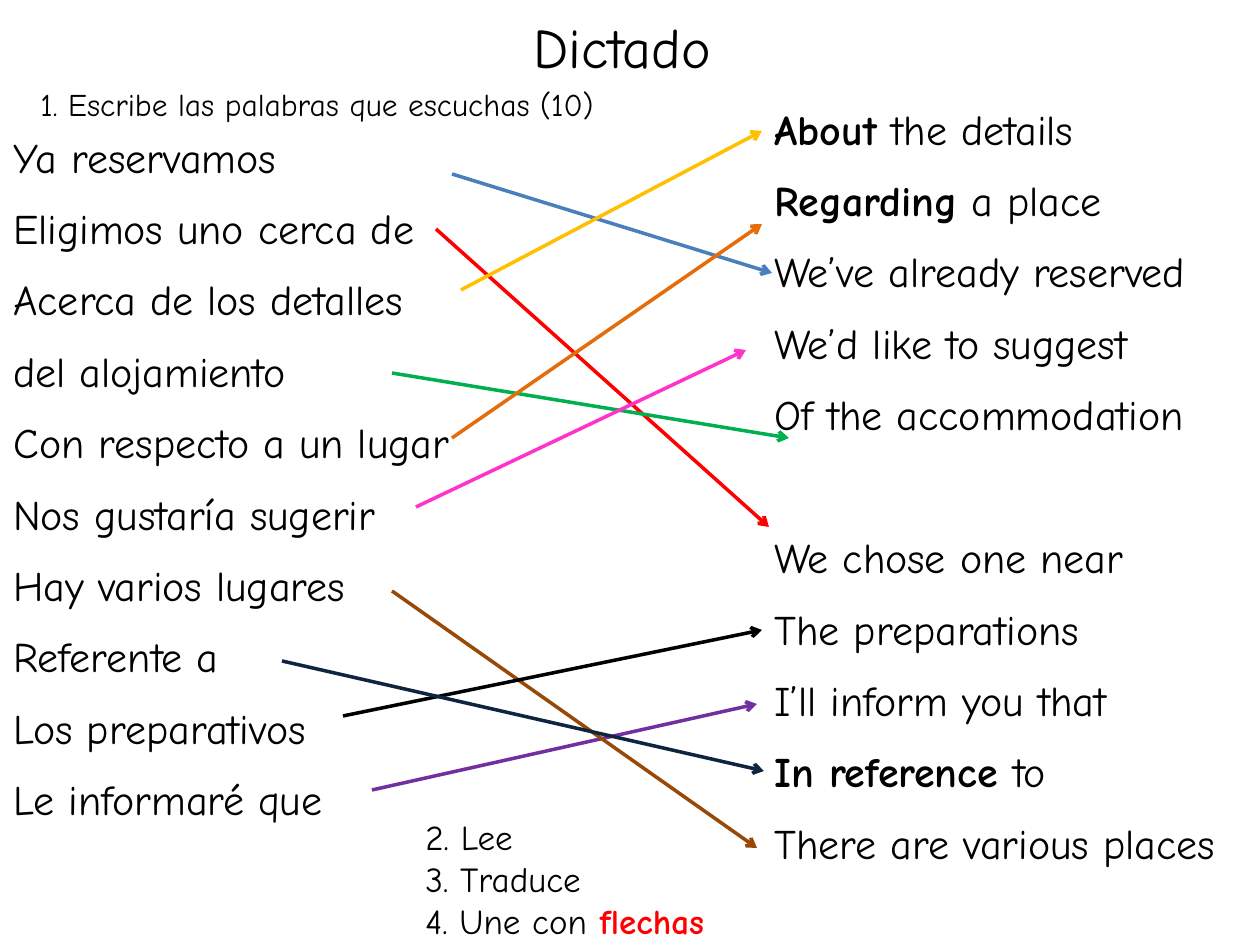
from typing import NamedTuple

from lxml.etree import SubElement
from pptx import Presentation
from pptx.dml.color import RGBColor
from pptx.enum.shapes import MSO_CONNECTOR as Connector
from pptx.enum.text import MSO_AUTO_SIZE as AutoSize
from pptx.oxml.ns import qn
from pptx.util import Pt

PX = 914400 // 126  # EMU in one px
FONT = "Comic Neue"

BLACK = RGBColor(0x00, 0x00, 0x00)
RED = RGBColor(0xFF, 0x00, 0x00)
BLUE = RGBColor(0x4B, 0x7E, 0xBC)
GOLD = RGBColor(0xFF, 0xC0, 0x00)
GREEN = RGBColor(0x00, 0xB0, 0x50)
PURPLE = RGBColor(0x70, 0x30, 0xA0)
PINK = RGBColor(0xFF, 0x33, 0xCC)
ORANGE = RGBColor(0xE4, 0x6C, 0x0A)
BROWN = RGBColor(0x98, 0x48, 0x07)
NAVY = RGBColor(0x0F, 0x24, 0x3E)


class Words(NamedTuple):
    text: str
    bold: bool = False
    color: RGBColor = BLACK
    size: int | None = None  # None takes the size of the block


class Line(NamedTuple):
    words: list[Words]
    space_before: int = 0


class Block(NamedTuple):
    left: int
    top: int
    width: int
    height: int
    size: int
    lines: list[Line]
    space_after: int = 0
    wrap: bool = False


class Match(NamedTuple):
    start: tuple[int, int]
    end: tuple[int, int]
    color: RGBColor


def plain(*texts: str) -> list[Line]:
    return [Line([Words(text)]) for text in texts]


def draw_block(slide, block: Block) -> None:
    box = slide.shapes.add_textbox(
        *(PX * n for n in (block.left, block.top, block.width, block.height)))
    frame = box.text_frame
    frame_format = {"word_wrap": block.wrap,
                    "auto_size": AutoSize.SHAPE_TO_FIT_TEXT}
    for key, value in frame_format.items():
        setattr(frame, key, value)

    for index, line in enumerate(block.lines):
        paragraph = frame.add_paragraph() if index else frame.paragraphs[0]
        spacing = {"space_before": Pt(line.space_before),
                   "space_after": Pt(block.space_after)}
        for key, value in spacing.items():
            setattr(paragraph, key, value)
        for words in line.words:
            run = paragraph.add_run()
            run.text = words.text
            run_format = {"name": FONT, "size": Pt(words.size or block.size),
                          "bold": words.bold}
            for key, value in run_format.items():
                setattr(run.font, key, value)
            run.font.color.rgb = words.color


def draw_match(slide, match: Match) -> None:
    arrow = slide.shapes.add_connector(
        Connector.STRAIGHT, *(PX * n for n in match.start + match.end))
    arrow.line.width = Pt(2)
    arrow.line.color.rgb = match.color
    SubElement(arrow.line._get_or_add_ln(), qn("a:tailEnd"), type="arrow")
    SubElement(arrow._element.spPr, qn("a:effectLst"))


TITLE = Block(500, -1, 249, 89, 32, [Line([Words(" ", size=36), Words("Dictado")])])

SPANISH = Block(1, 125, 621, 857, 24, plain(
    "Ya reservamos",
    "Eligimos uno cerca de",
    "Acerca de los detalles",
    "del alojamiento",
    "Con respecto a un lugar",
    "Nos gustaría sugerir",
    "Hay varios lugares",
    "Referente a",
    "Los preparativos",
    "Le informaré que",
), space_after=12, wrap=True)

# The gap after the fifth phrase is one row high
ENGLISH = Block(762, 97, 532, 785, 24, [
    Line([Words("About ", bold=True), Words("the details")]),
    Line([Words("Regarding", bold=True), Words(" a place")]),
    *plain("We’ve already reserved", "We’d like to suggest",
           "Of the accommodation"),
    Line([Words("We chose one near")], space_before=41),
    *plain("The preparations", "I’ll inform you that"),
    Line([Words("In reference ", bold=True), Words("to")]),
    *plain("There are various places"),
], space_after=12, wrap=True)

FIRST_STEP = Block(28, 79, 621, 50, 18,
                   plain("1. Escribe las palabras que escuchas (10)"))

NEXT_STEPS = Block(413, 809, 349, 178, 20, [
    *plain("2. Lee", "3. Traduce"),
    Line([Words("4. Une con"), Words(" flechas", bold=True, color=RED)]),
])

MATCHES = [
    Match((452, 174), (772, 273), BLUE),
    Match((436, 229), (769, 527), RED),
    Match((461, 290), (762, 131), GOLD),
    Match((392, 373), (789, 438), GREEN),
    Match((372, 790), (757, 704), PURPLE),
    Match((416, 507), (746, 350), PINK),
    Match((452, 438), (762, 224), ORANGE),
    Match((392, 591), (757, 848), BROWN),
    Match((343, 716), (762, 630), BLACK),
    Match((282, 661), (764, 771), NAVY),
]


def main() -> None:
    deck = Presentation()
    deck.slide_width, deck.slide_height = 1260 * PX, 945 * PX
    slide = deck.slides.add_slide(deck.slide_layouts[6])

    # Title, both phrase columns and the first step
    for block in (TITLE, SPANISH, ENGLISH, FIRST_STEP):
        draw_block(slide, block)

    # Arrows from each phrase to its translation
    for match in MATCHES:
        draw_match(slide, match)

    # Remaining steps
    draw_block(slide, NEXT_STEPS)

    deck.save("out.pptx")


if __name__ == "__main__":
    main()
